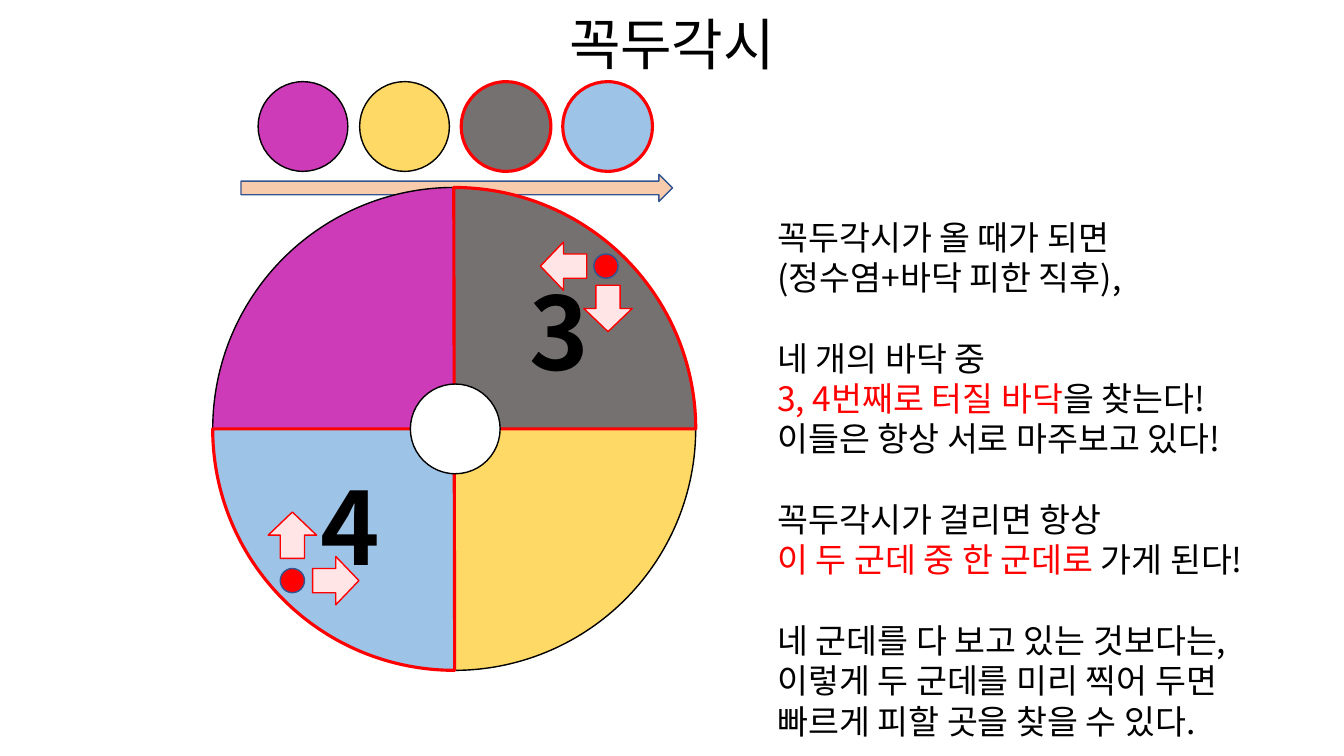
from lxml.etree import SubElement
from pptx import Presentation
from pptx.dml.color import RGBColor
from pptx.enum.shapes import MSO_SHAPE
from pptx.enum.text import MSO_ANCHOR, MSO_AUTO_SIZE, PP_ALIGN
from pptx.oxml import parse_xml
from pptx.oxml.ns import nsdecls, qn
from pptx.util import Inches, Pt

BLACK, WHITE, RED, NAVY = "000000", "FFFFFF", "FF0000", "325491"
PURPLE, YELLOW, GRAY, BLUE = "CD3BB8", "FFD966", "767171", "9DC3E6"
PEACH, PINK = "F8CBAD", "FFE5E5"


def color(value):
    """Turn a hex string into a colour."""
    return RGBColor.from_string(value)


class PuppetSlide:
    """Hold the style and the current slide."""

    font_name = "Noto Sans CJK KR"
    line_factor = 1.2

    def __init__(self, presentation):
        """Add a slide with a title and a body placeholder."""
        self.slide = presentation.slides.add_slide(presentation.slide_layouts[1])

    def shape(self, kind, left, top, width, height, fill, line, weight=1, rotation=0):
        """Add a filled and outlined preset shape."""
        shape = self.slide.shapes.add_shape(
            kind, Inches(left), Inches(top), Inches(width), Inches(height))
        shape.shadow.inherit = False
        shape.fill.solid()
        shape.fill.fore_color.rgb = color(fill)
        shape.line.color.rgb = color(line)
        shape.line.width = Pt(weight)
        shape.rotation = rotation
        return shape

    def quarter(self, rotation, fill, line, weight):
        """Add one quarter of the wheel."""
        pie = self.shape(MSO_SHAPE.PIE, 2.11, 1.86, 4.79, 4.79, fill, line, weight, rotation)
        pie.adjustments[0] = 107.93
        pie.adjustments[1] = 162

    def frame(self, shape, left, top, width, height):
        """Place a text shape and prepare its frame."""
        shape.left, shape.top = Inches(left), Inches(top)
        shape.width, shape.height = Inches(width), Inches(height)
        text_frame = shape.text_frame
        text_frame.word_wrap = True
        text_frame.auto_size = MSO_AUTO_SIZE.NONE
        text_frame.vertical_anchor = MSO_ANCHOR.TOP
        return text_frame

    def format_run(self, run, size, fill=BLACK, bold=False):
        """Set the font of a run."""
        run.font.name = self.font_name
        run.font.size = Pt(size)
        run.font.bold = bold
        run.font.color.rgb = color(fill)
        east_asian = SubElement(run.font._element, qn("a:ea"))
        east_asian.set("typeface", self.font_name)

    def format_paragraph(self, paragraph, size, alignment, before=0):
        """Set the alignment and spacing of a paragraph."""
        paragraph.alignment = alignment
        paragraph.line_spacing = Pt(size * self.line_factor)
        paragraph.space_before = Pt(before)
        paragraph.space_after = Pt(0)

    def title(self, text):
        """Fill the title placeholder."""
        text_frame = self.frame(self.slide.shapes.title, 5.44, 0.04, 2.45, 0.77)
        text_frame.text = text
        paragraph = text_frame.paragraphs[0]
        self.format_paragraph(paragraph, 40, PP_ALIGN.CENTER)
        self.format_run(paragraph.runs[0], 40)

    def body(self, groups, size=24):
        """Fill the body placeholder with groups of lines split into coloured parts."""
        text_frame = self.frame(self.slide.placeholders[1], 7.61, 2.1, 5.51, 5.35)
        lines = [(group, index, parts) for group, block in enumerate(groups)
                 for index, parts in enumerate(block)]
        text_frame.text = "\n".join("" for _ in lines)
        for paragraph, (group, index, parts) in zip(text_frame.paragraphs, lines):
            gap = size * self.line_factor if group and not index else 0
            self.format_paragraph(paragraph, size, PP_ALIGN.LEFT, gap)
            properties = paragraph._p.get_or_add_pPr()
            properties.set("marL", "0")
            properties.set("indent", "0")
            SubElement(properties, qn("a:buNone"))
            for text, fill in parts:
                run = paragraph.add_run()
                run.text = text
                self.format_run(run, size, fill)

    def digit(self, text, left, top):
        """Add a large outlined number."""
        box = self.slide.shapes.add_textbox(0, 0, 0, 0)
        text_frame = self.frame(box, left, top, 0.79, 1.31)
        text_frame.text = text
        paragraph = text_frame.paragraphs[0]
        self.format_paragraph(paragraph, 72, PP_ALIGN.CENTER)
        run = paragraph.runs[0]
        self.format_run(run, 72, bold=True)
        run.font._element.insert(0, parse_xml(
            f'<a:ln {nsdecls("a")} w="{Pt(0.75)}"><a:solidFill>'
            f'<a:srgbClr val="{WHITE}"/></a:solidFill></a:ln>'))


def main():
    """Build and save the slide."""
    presentation = Presentation()
    presentation.slide_width, presentation.slide_height = Inches(13.33), Inches(7.5)
    puppet = PuppetSlide(presentation)
    puppet.title("꼭두각시")
    puppet.body([
        [[("꼭두각시가 올 때가 되면", BLACK)],
         [("(정수염+바닥 피한 직후),", BLACK)]],
        [[("네 개의 바닥 중", BLACK)],
         [("3, 4번째로 터질 바닥", RED), ("을 찾는다!", BLACK)],
         [("이들은 항상 서로 마주보고 있다!", BLACK)]],
        [[("꼭두각시가 걸리면 항상", BLACK)],
         [("이 두 군데 중 한 군데로 ", RED), ("가게 된다!", BLACK)]],
        [[("네 군데를 다 보고 있는 것보다는,", BLACK)],
         [("이렇게 두 군데를 미리 찍어 두면", BLACK)],
         [("빠르게 피할 곳을 찾을 수 있다.", BLACK)]],
    ])

    puppet.shape(MSO_SHAPE.RIGHT_ARROW, 2.39, 1.73, 4.28, 0.27, PEACH, NAVY)
    floors = [(0, PURPLE, BLACK, 1), (180, YELLOW, BLACK, 1),
              (90, GRAY, RED, 2.25), (270, BLUE, RED, 2.25)]
    for floor in floors:
        puppet.quarter(*floor)
    puppet.shape(MSO_SHAPE.OVAL, 4.07, 3.81, 0.89, 0.89, WHITE, BLACK)
    for index, (_, fill, line, weight) in enumerate(floors):
        puppet.shape(MSO_SHAPE.OVAL, 2.56 + 1.007 * index, 0.81, 0.89, 0.89, fill, line, weight)

    puppet.digit("3", 5.15, 2.63)
    puppet.digit("4", 3.08, 4.56)
    for left, top in [(2.78, 5.64), (5.89, 2.52)]:
        puppet.shape(MSO_SHAPE.OVAL, left, top, 0.24, 0.24, RED, NAVY)
    for left, top, rotation in [(3.09, 5.53, 90), (2.66, 5.08, 0),
                                (5.35, 2.41, 270), (5.79, 2.83, 180)]:
        puppet.shape(MSO_SHAPE.UP_ARROW, left, top, 0.48, 0.46, PINK, RED, rotation=rotation)
    presentation.save("out.pptx")


if __name__ == "__main__":
    main()
